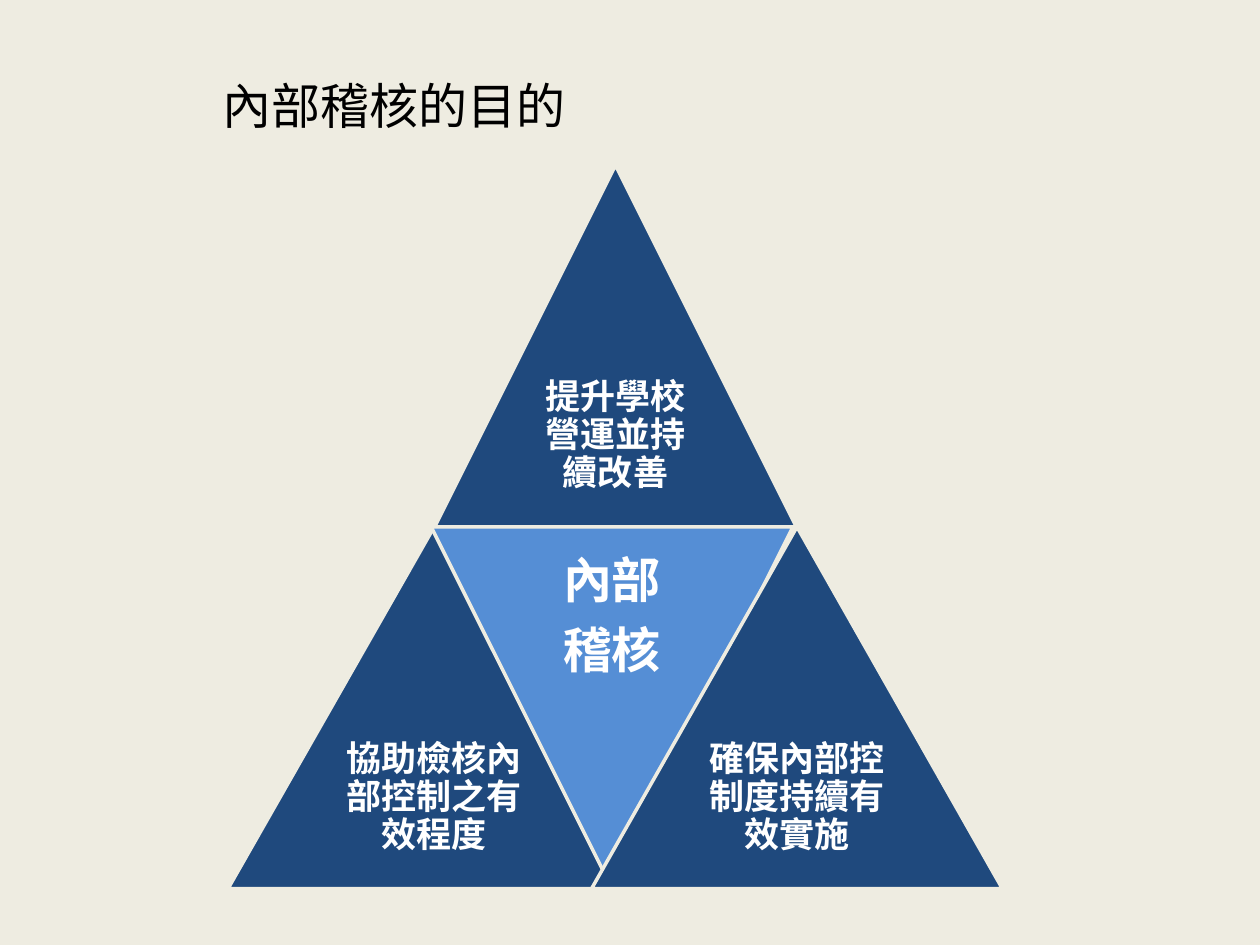
from pptx import Presentation
from pptx.dml.color import RGBColor
from pptx.enum.shapes import MSO_SHAPE
from pptx.enum.text import MSO_ANCHOR, PP_ALIGN
from pptx.util import Pt

COLORS = {
    "paper": "EEECE1",
    "navy": "1F497D",
    "blue": "558ED5",
    "white": "FFFFFF",
    "black": "000000",
}


def color(name):
    return RGBColor.from_string(COLORS[name])


def add_text(box, lines, size, ink, bold, inset, spacing, after):
    left, top, width, height = box
    frame = slide.shapes.add_textbox(Pt(left), Pt(top), Pt(width), Pt(height)).text_frame
    frame.word_wrap = True
    frame.vertical_anchor = MSO_ANCHOR.MIDDLE
    frame.margin_left = frame.margin_right = Pt(inset)
    frame.margin_top = frame.margin_bottom = Pt(inset)
    for index, line in enumerate(lines):
        paragraph = frame.add_paragraph() if index else frame.paragraphs[0]
        paragraph.alignment = PP_ALIGN.CENTER
        paragraph.line_spacing = spacing
        paragraph.space_after = Pt(after)
        run = paragraph.add_run()
        run.text = line
        run.font.name = "Arial"
        run.font.size = Pt(size)
        run.font.bold = bold
        run.font.color.rgb = color(ink)


deck = Presentation()
deck.slide_width = Pt(720)
deck.slide_height = Pt(540)
slide = deck.slides.add_slide(deck.slide_layouts[6])
slide.background.fill.solid()
slide.background.fill.fore_color.rgb = color("paper")

add_text((-99, 15, 648, 90), ["內部稽核的目的"], 28, "black", False, 5, 1.0, 0)

HEIGHT = 206.7
TOP_ROW = 94.4
BOTTOM_ROW = TOP_ROW + HEIGHT
purposes = [
    (248.4, TOP_ROW, 206.7, "navy", 0, ["提升學校營運並持續改善"], 20, 6),
    (130.3, BOTTOM_ROW, 235.6, "navy", 0, ["協助檢核內部控制之有效程度"], 20, 6),
    (246.4, BOTTOM_ROW, 206.7, "blue", 180, ["內部", "稽核"], 28, 8.5),
    (338.1, BOTTOM_ROW, 234.7, "navy", 0, ["確保內部控制度持續有效實施"], 20, 6),
]

for left, top, width, fill, rotation, lines, size, inset in purposes:
    triangle = slide.shapes.add_shape(
        MSO_SHAPE.ISOSCELES_TRIANGLE, Pt(left), Pt(top), Pt(width), Pt(HEIGHT)
    )
    triangle.rotation = rotation
    triangle.shadow.inherit = False
    triangle.fill.solid()
    triangle.fill.fore_color.rgb = color(fill)
    triangle.line.color.rgb = color("paper")
    triangle.line.width = Pt(2)
    text_top = top if rotation else top + HEIGHT / 2
    text_box = (left + width / 4, text_top, width / 2, HEIGHT / 2)
    add_text(text_box, lines, size, "white", True, inset, 0.9, size * 0.35)

deck.save("out.pptx")
